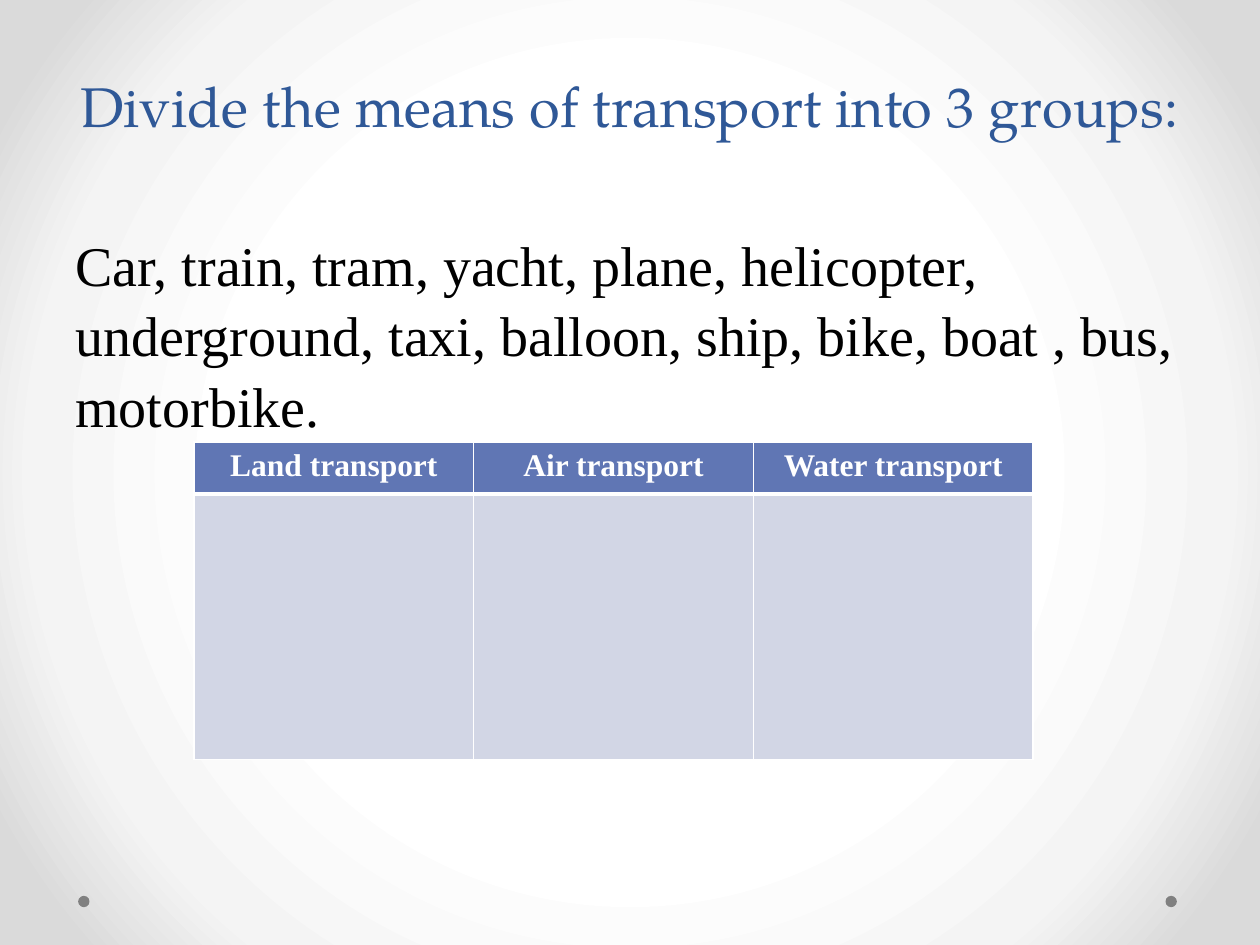
from lxml import etree
from pptx import Presentation
from pptx import util as u
from pptx.dml.color import RGBColor
from pptx.enum import shapes, text
from pptx.oxml.ns import qn

BLUE = RGBColor(0x2F, 0x58, 0x97)
HEADER = RGBColor(0x60, 0x76, 0xB4)
CELL = RGBColor(0xD2, 0xD6, 0xE5)
GRAY = RGBColor(0x80, 0x80, 0x80)
BLACK = RGBColor(0, 0, 0)
WHITE = RGBColor(0xFF, 0xFF, 0xFF)
SERIF = "Times New Roman"
TITLE_FONT = "TeX Gyre Pagella"


class SlideBuilder:
    def __init__(self, slide):
        self.slide = slide

    def radial_background(self, stops):
        self.slide.background.fill.gradient()
        grad = self.slide.element.find(".//" + qn("a:gradFill"))
        for child in list(grad):
            grad.remove(child)
        stop_list = etree.SubElement(grad, qn("a:gsLst"))
        for percent, color in stops:
            stop = etree.SubElement(stop_list, qn("a:gs"), pos=str(percent * 1000))
            etree.SubElement(stop, qn("a:srgbClr"), val=color)
        circle = etree.SubElement(grad, qn("a:path"), path="circle")
        etree.SubElement(circle, qn("a:fillToRect"),
                         {side: "50000" for side in "ltrb"})

    def dot(self, left, top, size):
        dot = self.slide.shapes.add_shape(
            shapes.MSO_SHAPE.OVAL, u.Inches(left), u.Inches(top),
            u.Inches(size), u.Inches(size))
        dot.shadow.inherit = False
        dot.fill.solid()
        dot.fill.fore_color.rgb = GRAY
        dot.line.fill.background()

    def style(self, paragraph, size, color, font=SERIF, bold=False):
        for run in paragraph.runs:
            run.font.size = u.Pt(size)
            run.font.name = font
            run.font.bold = bold
            run.font.color.rgb = color

    def text(self, box, words, size, color, font, spacing,
             align=text.PP_ALIGN.LEFT, anchor=text.MSO_ANCHOR.TOP):
        frame = self.slide.shapes.add_textbox(*map(u.Inches, box)).text_frame
        frame.word_wrap = True
        frame.vertical_anchor = anchor
        frame.text = words
        paragraph = frame.paragraphs[0]
        paragraph.alignment = align
        paragraph.line_spacing = spacing
        self.style(paragraph, size, color, font)
        return paragraph

    def borders(self, cell, widths):
        props = cell._tc.get_or_add_tcPr()
        for index, (side, points) in enumerate(widths.items()):
            line = etree.Element(qn("a:ln" + side), w=str(u.Pt(points)))
            fill = etree.SubElement(line, qn("a:solidFill"))
            etree.SubElement(fill, qn("a:srgbClr"), val=str(WHITE))
            props.insert(index, line)

    def table(self, left, top, col_width, row_heights, headings):
        table = self.slide.shapes.add_table(
            len(row_heights), len(headings), u.Inches(left), u.Inches(top),
            u.Inches(col_width * len(headings)),
            u.Inches(sum(row_heights))).table
        for row, height in zip(table.rows, row_heights):
            row.height = u.Inches(height)
        for col, heading in enumerate(headings):
            table.columns[col].width = u.Inches(col_width)
            header, answer = table.cell(0, col), table.cell(1, col)
            header.text = heading
            paragraph = header.text_frame.paragraphs[0]
            paragraph.alignment = text.PP_ALIGN.CENTER
            self.style(paragraph, 18, WHITE, bold=True)
            for cell, color, top_line, bottom_line in (
                    (header, HEADER, 1, 3), (answer, CELL, 3, 1)):
                cell.fill.solid()
                cell.fill.fore_color.rgb = color
                self.borders(cell, {"L": 1, "R": 1, "T": top_line, "B": bottom_line})


def main():
    deck = Presentation()
    deck.slide_width, deck.slide_height = u.Inches(10), u.Inches(7.5)
    page = SlideBuilder(deck.slides.add_slide(deck.slide_layouts[6]))

    # Background and corner dots
    page.radial_background([(50, "FFFFFF"), (76, "F4F4F4"), (92, "DADADA")])
    for left in (9.25, 0.62):
        page.dot(left, 7.11, 0.09)

    # Task and word list
    page.text((0.5, 0, 9, 1.15), "Divide the means of transport into 3 groups:",
              32, BLUE, TITLE_FONT, u.Pt(58),
              text.PP_ALIGN.CENTER, text.MSO_ANCHOR.BOTTOM)
    word_list = page.text(
        (0.5, 1.75, 9, 4.95),
        "Car, train, tram, yacht, plane, helicopter, underground, taxi, "
        "balloon, ship, bike, boat , bus, motorbike.",
        32, BLACK, SERIF, 1.05)
    word_list.space_before = u.Pt(6.4)

    # Answer table
    page.table(1.54, 3.51, 2.22, (0.41, 2.11),
               ("Land transport", "Air transport", "Water transport"))

    deck.save("out.pptx")


if __name__ == "__main__":
    main()
